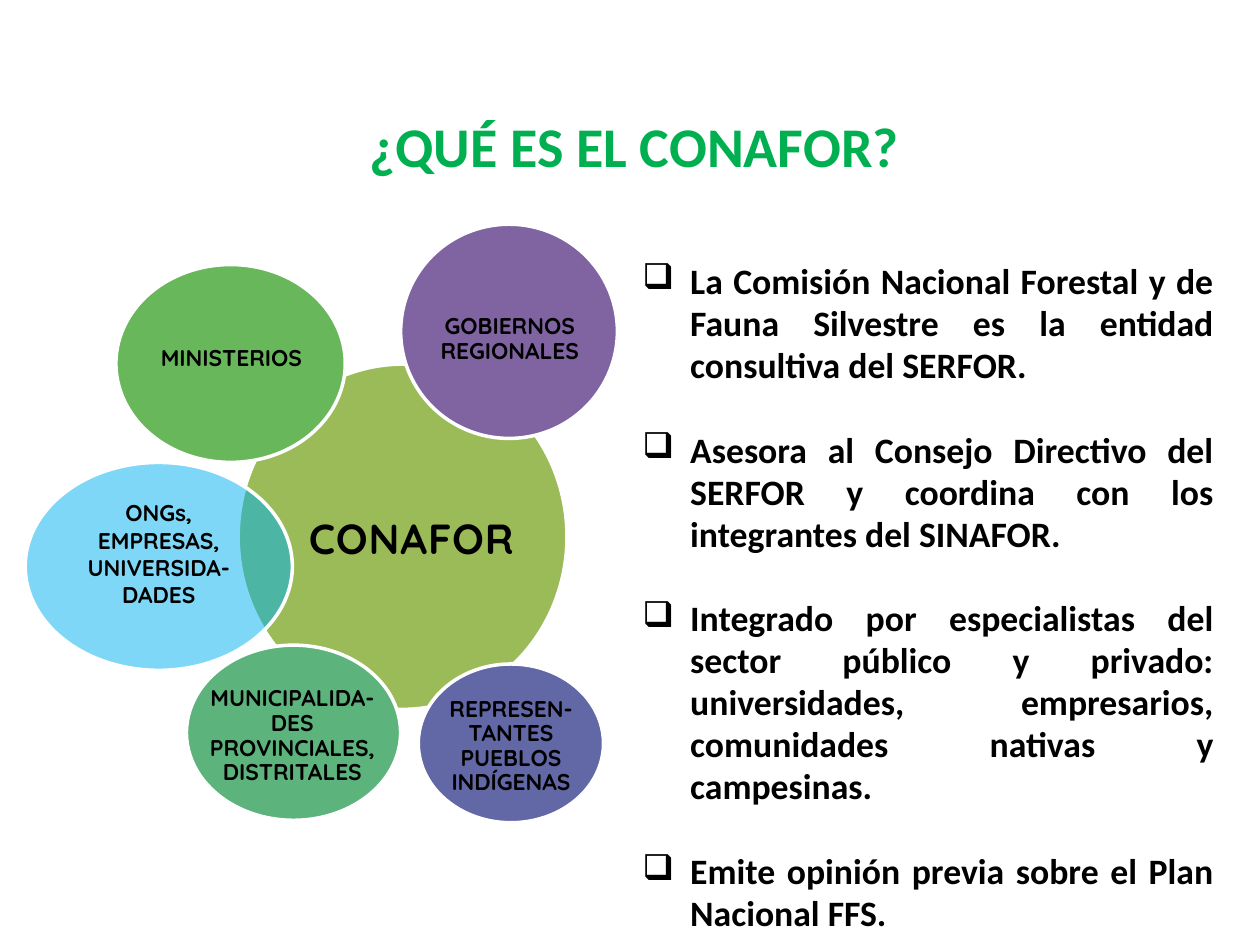
from dataclasses import dataclass

from lxml.etree import SubElement
from pptx import Presentation
from pptx.dml.color import RGBColor
from pptx.enum.shapes import MSO_SHAPE
from pptx.enum.text import MSO_ANCHOR, PP_ALIGN
from pptx.oxml.ns import qn
from pptx.util import Inches, Pt


@dataclass(frozen=True)
class Theme:
    title_font: str = "Calibri"
    circle_font: str = "Quicksand"
    title_color: str = "00B050"
    text_color: str = "000000"
    outline_color: str = "FFFFFF"
    title_size: float = 32
    body_size: float = 20.4
    center_size: float = 24
    circle_size: float = 13
    outline_width: float = 2


THEME = Theme()
SLIDE_SIZE = (10, 7.5)
TITLE = "¿QUÉ ES EL CONAFOR?"
TITLE_BOX = (0.27, 0.76, 9.53, 0.79)
BODY_BOX = (5, 2.02, 4.73, 4.65)
BODY_INDENT = 0.38
BODY_GAP = 24.4
POINTS = [
    "La Comisión Nacional Forestal y de Fauna Silvestre es la entidad consultiva del SERFOR.",
    "Asesora al Consejo Directivo del SERFOR y coordina con los integrantes del SINAFOR.",
    "Integrado por especialistas del sector público y privado: universidades, empresarios, "
    "comunidades nativas y campesinas.",
    "Emite opinión previa sobre el Plan Nacional FFS.",
]
CENTER = "CONAFOR"
CIRCLES = [
    (CENTER, "9BBB59", (1.89, 2.89, 2.61, 2.74), (2.24, 3.83, 2.05, 0.93)),
    ("MINISTERIOS", "69B75B", (0.92, 2.1, 1.82, 1.57), (1.19, 2.41, 1.29, 0.88)),
    ("MUNICIPALIDA-DES PROVINCIALES, DISTRITALES", "5CB37C",
     (1.48, 5.12, 1.7, 1.39), (1.53, 5.5, 1.58, 0.69)),
    ("ONGs, EMPRESAS, UNIVERSIDA-DADES", "00B0F0", (0.2, 3.67, 2.12, 1.65), None),
    ("GOBIERNOS REGIONALES", "8064A2", (3.18, 1.78, 1.72, 1.7), (3.37, 2.28, 1.35, 0.83)),
    ("REPRESEN-TANTES PUEBLOS INDÍGENAS", "6267A6",
     (3.32, 5.27, 1.47, 1.26), (3.45, 5.52, 1.21, 0.81)),
]


def inches(box):
    """Convert a box in inches to slide lengths."""
    return [Inches(value) for value in box]


def write_text(paragraph, text, *, size, font, color=THEME.text_color,
               align=PP_ALIGN.CENTER, line_spacing=1.0, letter_spacing=0):
    """Write one bold run and format its paragraph."""
    paragraph.alignment = align
    paragraph.line_spacing = line_spacing
    run = paragraph.add_run()
    run.text = text
    run.font.size = Pt(size)
    run.font.name = font
    run.font.bold = True
    run.font.color.rgb = RGBColor.from_string(color)
    if letter_spacing:
        run.font._element.set("spc", str(int(letter_spacing * 100)))


def add_bullet(paragraph):
    """Give a paragraph a checkbox bullet with a hanging indent."""
    properties = paragraph._p.get_or_add_pPr()
    properties.set("marL", str(Inches(BODY_INDENT)))
    properties.set("indent", str(-Inches(BODY_INDENT)))
    SubElement(properties, qn("a:buChar"), char="❑")


def add_title(slide):
    """Place and format the title placeholder."""
    title = slide.shapes.title
    title.left, title.top, title.width, title.height = inches(TITLE_BOX)
    title.text_frame.vertical_anchor = MSO_ANCHOR.MIDDLE
    write_text(title.text_frame.paragraphs[0], TITLE, size=THEME.title_size,
               font=THEME.title_font, color=THEME.title_color)


def add_body(slide):
    """Add the justified list of points."""
    frame = slide.shapes.add_textbox(*inches(BODY_BOX)).text_frame
    frame.word_wrap = True
    for index, point in enumerate(POINTS):
        paragraph = frame.add_paragraph() if index else frame.paragraphs[0]
        write_text(paragraph, point, size=THEME.body_size, font=THEME.title_font,
                   align=PP_ALIGN.JUSTIFY, line_spacing=0.98)
        if index:
            paragraph.space_before = Pt(BODY_GAP)
        add_bullet(paragraph)


def add_circle(slide, text, color, box, label_box):
    """Add an ellipse, with its label inside or in a box of its own."""
    circle = slide.shapes.add_shape(MSO_SHAPE.OVAL, *inches(box))
    circle.shadow.inherit = False
    circle.fill.solid()
    circle.fill.fore_color.rgb = RGBColor.from_string(color)
    circle.line.color.rgb = RGBColor.from_string(THEME.outline_color)
    circle.line.width = Pt(THEME.outline_width)
    if label_box:
        frame = slide.shapes.add_textbox(*inches(label_box)).text_frame
        frame.margin_left = frame.margin_right = Inches(0.02)
        frame.margin_top = frame.margin_bottom = Inches(0.02)
        frame.vertical_anchor = MSO_ANCHOR.MIDDLE
    else:
        frame = circle.text_frame
        frame.vertical_anchor = MSO_ANCHOR.TOP
        fill_color = circle._element.spPr.find(qn("a:solidFill"))[0]
        SubElement(fill_color, qn("a:alpha"), val="50000")
    frame.word_wrap = True
    is_center = text == CENTER
    write_text(frame.paragraphs[0], text, font=THEME.circle_font,
               size=THEME.center_size if is_center else THEME.circle_size,
               line_spacing=0.9 if label_box else 1.0,
               letter_spacing=0.5 if is_center else 0)


def main():
    """Build the slide and save it."""
    presentation = Presentation()
    presentation.slide_width, presentation.slide_height = inches(SLIDE_SIZE)
    slide = presentation.slides.add_slide(presentation.slide_layouts[5])
    add_title(slide)
    add_body(slide)
    for circle in CIRCLES:
        add_circle(slide, *circle)
    presentation.save("out.pptx")


if __name__ == "__main__":
    main()
